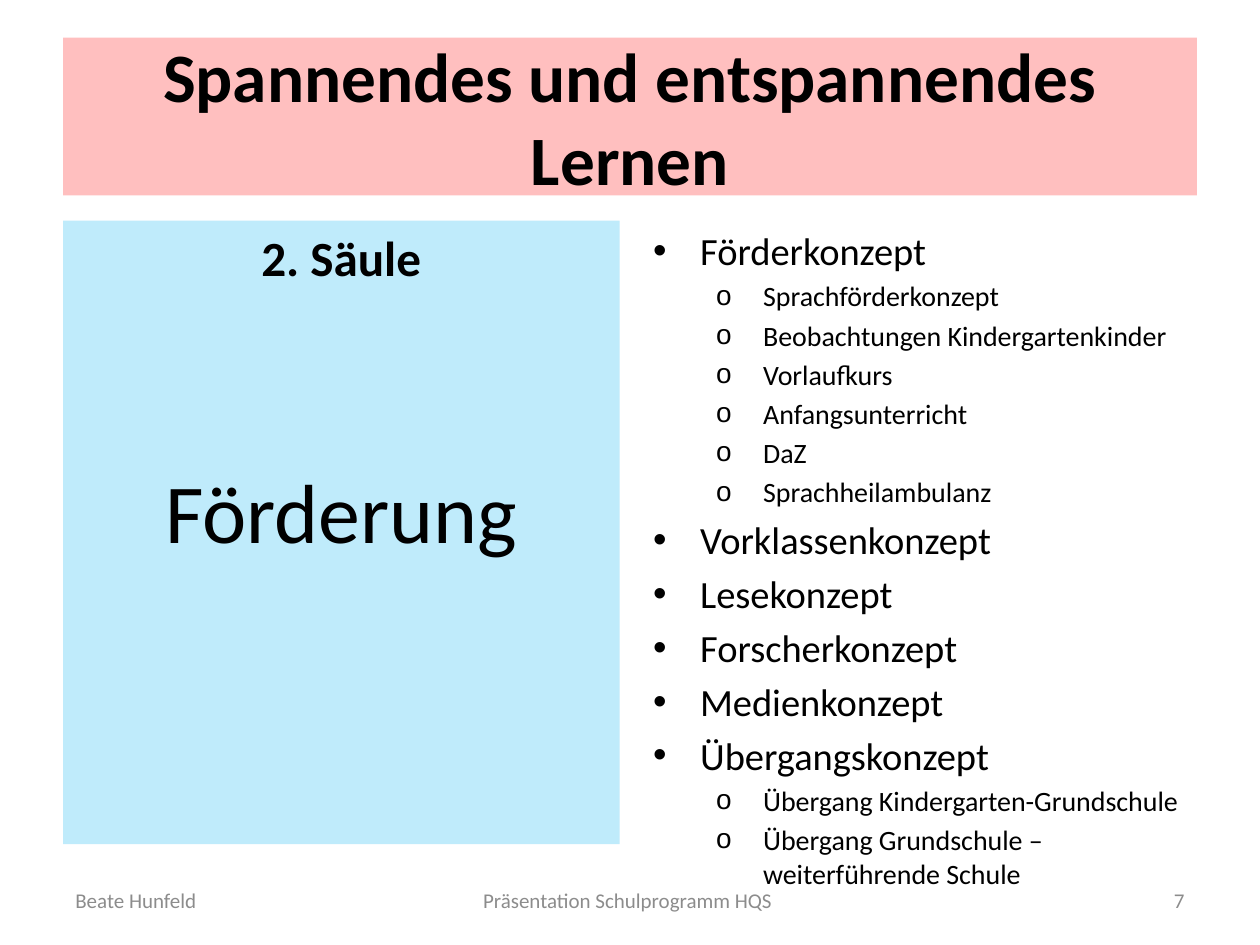
"""Build the slide on the second pillar of the school programme."""
from lxml import etree
from pptx import Presentation
from pptx.dml.color import RGBColor
from pptx.enum.text import MSO_ANCHOR, MSO_AUTO_SIZE, PP_ALIGN
from pptx.oxml.ns import qn
from pptx.util import Cm, Pt

LEFT, CENTER, RIGHT = PP_ALIGN.LEFT, PP_ALIGN.CENTER, PP_ALIGN.RIGHT
TOP, MIDDLE = MSO_ANCHOR.TOP, MSO_ANCHOR.MIDDLE
NO_FIT = MSO_AUTO_SIZE.NONE
BLACK = RGBColor(0x00, 0x00, 0x00)
GRAY = RGBColor(0x8C, 0x8C, 0x8C)
RED = RGBColor(0xFF, 0x00, 0x00)
BLUE = RGBColor(0x00, 0xB0, 0xF0)
FONT = "Calibri"

SLIDE_W, SLIDE_H = 25.4, 19.05
MARGIN, GAP = 1.27, 0.42
CONTENT_W = SLIDE_W - 2 * MARGIN
COLUMN_W = (CONTENT_W - GAP) / 2
BODY_TOP, BODY_H = 4.45, 12.57
FOOTER_TOP, FOOTER_H = 17.65, 1.01
SIDE_W, MIDDLE_W = 5.93, 8.04

CONCEPTS = [
    ("Förderkonzept", ["Sprachförderkonzept", "Beobachtungen Kindergartenkinder",
                       "Vorlaufkurs", "Anfangsunterricht", "DaZ", "Sprachheilambulanz"]),
    ("Vorklassenkonzept", []),
    ("Lesekonzept", []),
    ("Forscherkonzept", []),
    ("Medienkonzept", []),
    ("Übergangskonzept", ["Übergang Kindergarten-Grundschule",
                          "Übergang Grundschule – weiterführende Schule"]),
]


def place(sp, left, top, width, height, anchor):
    """Position a shape and return its prepared text frame."""
    sp.left, sp.top, sp.width, sp.height = Cm(left), Cm(top), Cm(width), Cm(height)
    tf = sp.text_frame
    tf.word_wrap = True
    tf.auto_size = NO_FIT
    tf.vertical_anchor = anchor
    return tf


def tint(sp, color):
    """Fill a shape with a quarter-opaque colour."""
    sp.fill.solid()
    sp.fill.fore_color.rgb = color
    clr = sp.fill._xPr.find(qn("a:solidFill"))[0]
    etree.SubElement(clr, qn("a:alpha"), val="25000")


def add_text(tf, text, size, color=BLACK, bold=False, align=LEFT, before=None,
             level=0, bullet=None, indent=0, hanging=0):
    """Write one formatted paragraph into a text frame."""
    p = tf.paragraphs[0]
    if p.runs:
        p = tf.add_paragraph()
    p.alignment, p.level = align, level
    if before is not None:
        p.space_before = Pt(before)
    pPr = p._p.get_or_add_pPr()
    pPr.set("marL", str(Cm(indent)))
    pPr.set("indent", str(-Cm(hanging)))
    if bullet:
        etree.SubElement(pPr, qn("a:buChar"), char=bullet)
    else:
        etree.SubElement(pPr, qn("a:buNone"))
    r = p.add_run()
    r.text = text
    r.font.name, r.font.size, r.font.bold = FONT, Pt(size), bold
    r.font.color.rgb = color


def add_title(s):
    """Fill the title band."""
    sp = s.shapes.title
    tint(sp, RED)
    tf = place(sp, MARGIN, 0.76, CONTENT_W, 3.18, MIDDLE)
    add_text(tf, "Spannendes und entspannendes Lernen", 39.6, bold=True, align=CENTER)


def add_pillar(s):
    """Fill the left panel with the pillar's number and name."""
    sp = s.placeholders[1]
    tint(sp, BLUE)
    tf = place(sp, MARGIN, BODY_TOP, COLUMN_W, BODY_H, TOP)
    add_text(tf, "2. Säule", 28.1, bold=True, align=CENTER)
    add_text(tf, "Förderung", 47.9, align=CENTER, before=99)


def add_concepts(s):
    """Fill the right column with the two-level list."""
    left = MARGIN + COLUMN_W + GAP
    tf = place(s.placeholders[2], left, BODY_TOP, COLUMN_W, BODY_H, TOP)
    for concept, parts in CONCEPTS:
        add_text(tf, concept, 22, bullet="•", indent=0.95, hanging=0.95)
        for part in parts:
            add_text(tf, part, 16, level=1, bullet="o", indent=2.22, hanging=0.95)


def add_footer(s):
    """Add author, presentation name and slide number."""
    for text, left, width, align in (
        ("Beate Hunfeld", MARGIN, SIDE_W, LEFT),
        ("Präsentation Schulprogramm HQS ", (SLIDE_W - MIDDLE_W) / 2, MIDDLE_W, CENTER),
        ("7", SLIDE_W - MARGIN - SIDE_W, SIDE_W, RIGHT),
    ):
        sp = s.shapes.add_textbox(0, 0, 0, 0)
        tf = place(sp, left, FOOTER_TOP, width, FOOTER_H, MIDDLE)
        add_text(tf, text, 12, color=GRAY, align=align)


def main():
    """Create the presentation and save it."""
    prs = Presentation()
    prs.slide_width, prs.slide_height = Cm(SLIDE_W), Cm(SLIDE_H)
    s = prs.slides.add_slide(prs.slide_layouts[3])
    add_title(s)
    add_pillar(s)
    add_concepts(s)
    add_footer(s)
    prs.save("out.pptx")


if __name__ == "__main__":
    main()
